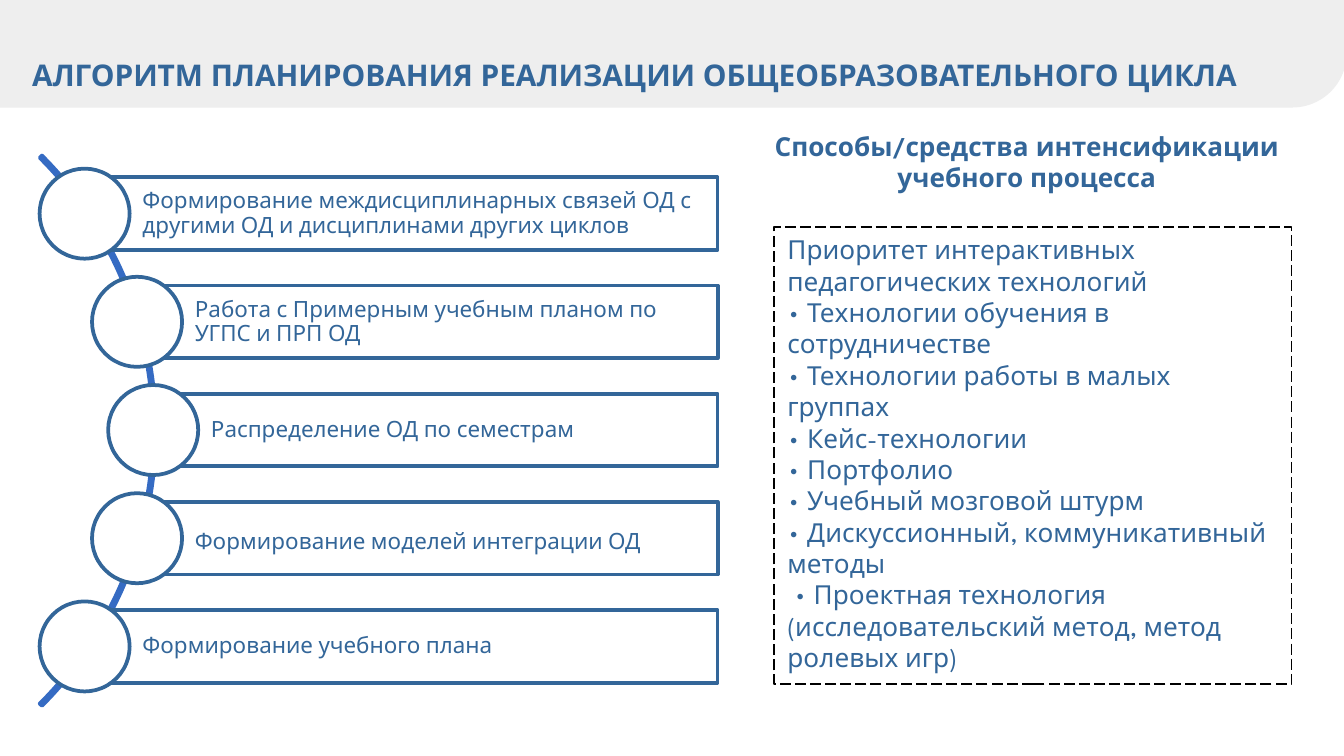
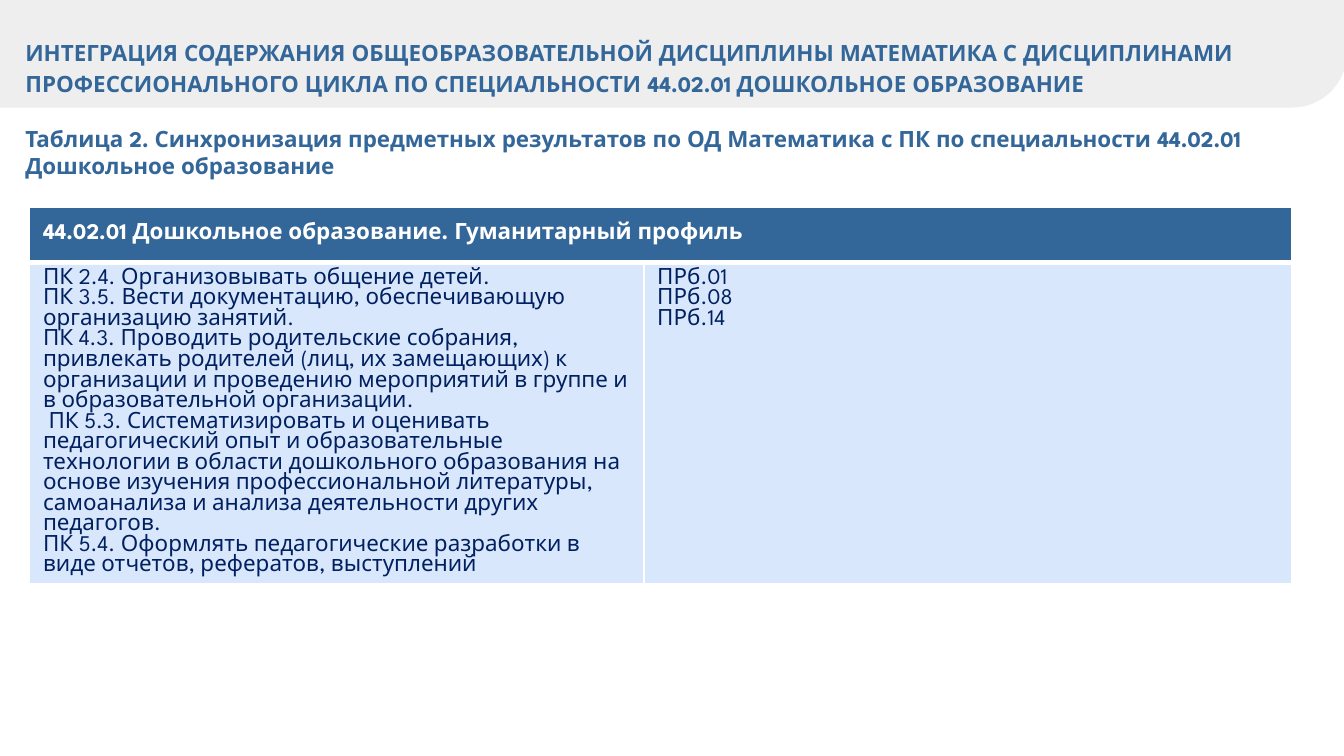
from lxml import etree
from pptx import Presentation
from pptx.dml.color import RGBColor
from pptx.enum.dml import MSO_LINE_DASH_STYLE as Dash
from pptx.enum.shapes import MSO_SHAPE as Shape
from pptx.enum.text import MSO_ANCHOR as Anchor, PP_ALIGN as Align
from pptx.oxml.ns import qn
from pptx.util import Inches, Pt

BLUE = RGBColor(0x33, 0x66, 0x99)
ARC_BLUE = RGBColor(0x35, 0x6B, 0xC3)
NAVY = RGBColor(0x00, 0x20, 0x60)
PALE_BLUE = RGBColor(0xD9, 0xE7, 0xFD)
GREY = RGBColor(0xEE, 0xEE, 0xEE)
WHITE = RGBColor(0xFF, 0xFF, 0xFF)
BLACK = RGBColor(0x00, 0x00, 0x00)
FONT = "League Spartan"

UNIT = Inches(0.1)
COLUMNS, ROWS = 100, 56.25

STEP_TOP, STEP_PITCH, STEP_HEIGHT, STEP_RIGHT = 13.2, 8.05, 5.4, 53.4
CIRCLE = 6.7
STEPS = [
    (6.3, "Формирование междисциплинарных связей ОД с другими ОД и дисциплинами других циклов"),
    (10.2, "Работа с Примерным учебным планом по УГПС и ПРП ОД"),
    (11.4, "Распределение ОД по семестрам"),
    (10.2, "Формирование моделей интеграции ОД"),
    (6.3, "Формирование учебного плана"),
]
LOWERED_STEP = 3

METHODS = [
    "Приоритет интерактивных педагогических технологий",
    "• Технологии обучения в сотрудничестве",
    "• Технологии работы в малых группах",
    "• Кейс-технологии",
    "• Портфолио",
    "• Учебный мозговой штурм",
    "• Дискуссионный, коммуникативный методы",
    " • Проектная технология (исследовательский метод, метод ролевых игр)",
]

COMPETENCES = [
    "ПК 2.4. Организовывать общение детей.",
    "ПК 3.5. Вести документацию, обеспечивающую организацию занятий.",
    "ПК 4.3. Проводить родительские собрания, привлекать родителей (лиц, их замещающих) "
    "к организации и проведению мероприятий в группе и в образовательной организации.",
    " ПК 5.3. Систематизировать и оценивать педагогический опыт и образовательные технологии "
    "в области дошкольного образования на основе изучения профессиональной литературы, "
    "самоанализа и анализа деятельности других педагогов.",
    "ПК 5.4. Оформлять педагогические разработки в виде отчетов, рефератов, выступлений",
]
RESULTS = ["ПРб.01", "ПРб.08", "ПРб.14"]


def grid(*cells):
    return [round(cell * UNIT) for cell in cells]


def write(frame, lines, size, color=BLUE, bold=False, align=Align.LEFT, spacing=None):
    frame.word_wrap = True
    for index, line in enumerate(lines):
        paragraph = frame.add_paragraph() if index else frame.paragraphs[0]
        paragraph.text = line
        paragraph.alignment = align
        paragraph.line_spacing = spacing
        paragraph.font.name = FONT
        paragraph.font.size = Pt(size)
        paragraph.font.bold = bold
        paragraph.font.color.rgb = color


def set_margins(frame, left, top, right, bottom):
    frame.margin_left, frame.margin_top, frame.margin_right, frame.margin_bottom = grid(
        left, top, right, bottom)


def add_figure(slide, kind, box, fill=None, line=None, width=2):
    shape = slide.shapes.add_shape(kind, *grid(*box))
    shape.shadow.inherit = False
    if fill is None:
        shape.fill.background()
    else:
        shape.fill.solid()
        shape.fill.fore_color.rgb = fill
    if line is None:
        shape.line.fill.background()
    else:
        shape.line.color.rgb = line
        shape.line.width = Pt(width)
    return shape


def add_label(slide, box, text, size, **style):
    frame = slide.shapes.add_textbox(*grid(*box)).text_frame
    write(frame, [text], size, bold=True, **style)
    return frame


def add_titled_slide(presentation, title, left, top, size):
    slide = presentation.slides.add_slide(presentation.slide_layouts[6])
    band = add_figure(slide, Shape.ROUND_1_RECTANGLE, (0, -0.1, 100.2, 8.1), GREY)
    band.adjustments[0] = 0.5
    band.rotation = 180
    band.element.spPr.find(qn("a:xfrm")).set("flipH", "1")
    frame = add_label(slide, (left, top, 92.3, 6.4), title, size, spacing=1.15)
    set_margins(frame, 1, 1, 1, 1)
    return slide


def add_steps(slide):
    arc = add_figure(slide, Shape.BLOCK_ARC, (-46.3, 3.1, 57.9, 57.9), line=ARC_BLUE)
    for index, value in enumerate((189, 27, 0.004)):
        arc.adjustments[index] = value
    for index, (left, text) in enumerate(STEPS):
        top = STEP_TOP + index * STEP_PITCH
        box = add_figure(slide, Shape.RECTANGLE,
                         (left, top, STEP_RIGHT - left, STEP_HEIGHT), WHITE, BLUE)
        box.text_frame.vertical_anchor = Anchor.MIDDLE
        set_margins(box.text_frame, 4.3, 0.9 if index == LOWERED_STEP else 0.3, 0.3, 0.3)
        write(box.text_frame, [text], 12, spacing=0.9)
        add_figure(slide, Shape.OVAL,
                   (left - CIRCLE / 2, top + (STEP_HEIGHT - CIRCLE) / 2, CIRCLE, CIRCLE),
                   WHITE, BLUE)


def add_methods(slide):
    add_label(slide, (55.1, 9.2, 42.6, 5.7),
              "Способы/средства интенсификации учебного процесса", 14, align=Align.CENTER)
    box = add_figure(slide, Shape.RECTANGLE, (57.6, 16.9, 38.5, 34), line=BLACK, width=0.75)
    box.line.dash_style = Dash.LONG_DASH
    box.text_frame.vertical_anchor = Anchor.TOP
    write(box.text_frame, METHODS, 14)


def set_borders(cell, bottom_width):
    properties = cell._tc.get_or_add_tcPr()
    widths = {"a:lnL": 1, "a:lnR": 1, "a:lnT": 1, "a:lnB": bottom_width}
    for index, (side, width) in enumerate(widths.items()):
        border = etree.Element(qn(side), w=str(Pt(width)))
        fill = etree.SubElement(border, qn("a:solidFill"))
        etree.SubElement(fill, qn("a:srgbClr"), val=str(WHITE))
        properties.insert(index, border)


def fill_cell(cell, lines, fill, bottom_width=1, **style):
    cell.fill.solid()
    cell.fill.fore_color.rgb = fill
    set_borders(cell, bottom_width)
    write(cell.text_frame, lines, 12, **style)


def add_competence_table(slide):
    widths, heights = (45.7, 48.2), (4.1, 23.9)
    table = slide.shapes.add_table(
        2, 2, *grid(2.2, 15.4, sum(widths), sum(heights))).table
    table.horz_banding = False
    for column, width in zip(table.columns, grid(*widths)):
        column.width = width
    for row, height in zip(table.rows, grid(*heights)):
        row.height = height
    header = table.cell(0, 0)
    header.merge(table.cell(0, 1))
    header.vertical_anchor = Anchor.MIDDLE
    fill_cell(header, ["44.02.01 Дошкольное образование. Гуманитарный профиль"], BLUE,
              bottom_width=3, color=WHITE, bold=True)
    set_borders(table.cell(0, 1), 3)
    for column, lines in enumerate((COMPETENCES, RESULTS)):
        fill_cell(table.cell(1, column), lines, PALE_BLUE, color=NAVY, spacing=Pt(11))


def main():
    presentation = Presentation()
    presentation.slide_width, presentation.slide_height = grid(COLUMNS, ROWS)

    algorithm = add_titled_slide(
        presentation, "АЛГОРИТМ ПЛАНИРОВАНИЯ РЕАЛИЗАЦИИ ОБЩЕОБРАЗОВАТЕЛЬНОГО ЦИКЛА", 1.4, 2.8, 16)
    add_steps(algorithm)
    add_methods(algorithm)

    integration = add_titled_slide(
        presentation,
        "ИНТЕГРАЦИЯ СОДЕРЖАНИЯ ОБЩЕОБРАЗОВАТЕЛЬНОЙ ДИСЦИПЛИНЫ МАТЕМАТИКА С ДИСЦИПЛИНАМИ "
        "ПРОФЕССИОНАЛЬНОГО ЦИКЛА ПО СПЕЦИАЛЬНОСТИ 44.02.01 ДОШКОЛЬНОЕ ОБРАЗОВАНИЕ", 0.9, 1.6, 12)
    add_competence_table(integration)
    add_label(integration, (0.9, 8.8, 101.1, 5),
              "Таблица 2. Синхронизация предметных результатов по ОД Математика с ПК "
              "по специальности 44.02.01 Дошкольное образование", 12)

    presentation.save("out.pptx")


if __name__ == "__main__":
    main()
